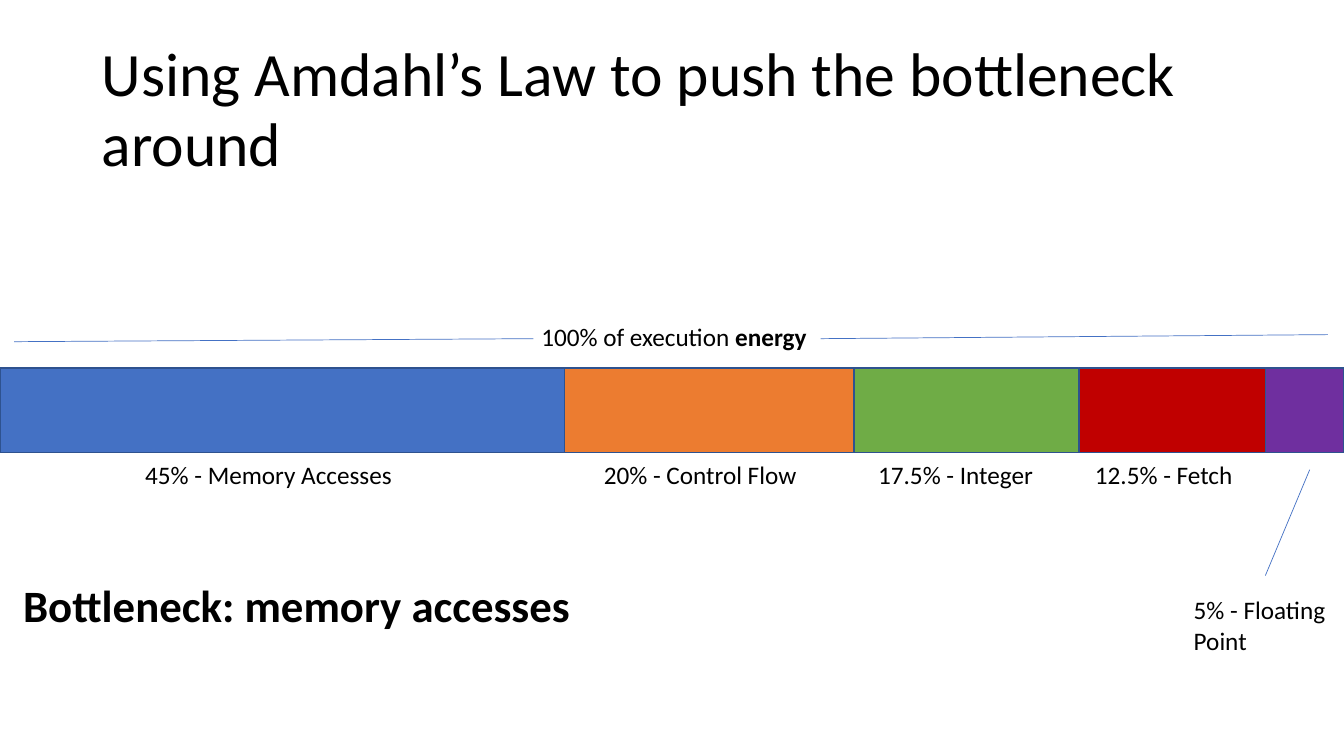
import itertools

import pptx
import pptx.dml.color
import pptx.enum.shapes
import pptx.oxml
import pptx.oxml.ns
import pptx.util

COLUMNS, ROWS = 13.33, 7.5
BAR_TOP, BAR_HEIGHT = 3.65, 0.84
LABEL_TOP = 4.55

# width, fill, label, label left, label top, label width
SEGMENTS = [
    (5.6, "4471C4", ["45% - Memory Accesses"], 1.43, LABEL_TOP, 2.48),
    (2.87, "EC7C30", ["20% - Control Flow"], 5.98, LABEL_TOP, 1.94),
    (2.23, "6FAC46", ["17.5% - Integer"], 8.7, LABEL_TOP, 1.57),
    (1.85, "C00000", ["12.5% - Fetch"], 10.85, LABEL_TOP, 1.39),
    (0.78, "6F2F9F", ["5% - Floating", "Point"], 11.83, 5.89, 1.34),
]


def colour(code):
    return pptx.dml.color.RGBColor.from_string(code)


def assign(target, values):
    for name, value in values.items():
        setattr(target, name, value)


class EnergySlide:
    """Draws on one slide, on a grid of one-inch columns and rows."""

    font = "Calibri"
    ink = "000000"
    outline = "2E528F"
    rule = "4471C4"

    def __init__(self, deck):
        assign(deck, {"slide_width": self.grid(COLUMNS), "slide_height": self.grid(ROWS)})
        self.page = deck.slides.add_slide(deck.slide_layouts[6])

    def grid(self, cells):
        return pptx.util.Inches(cells)

    def text(self, place, paras, size=18, bold=False, inset=(0.01, 0.01), leading=None):
        """Write paras; each is a string or a list of (words, bold) spans."""
        box = self.page.shapes.add_textbox(*map(self.grid, place))
        left, top = map(self.grid, inset)
        assign(box.text_frame, {"word_wrap": False, "margin_left": left, "margin_top": top,
                                "margin_right": 0, "margin_bottom": 0})
        for index, spans in enumerate(paras):
            para = box.text_frame.paragraphs[0] if index == 0 else box.text_frame.add_paragraph()
            assign(para, {"space_before": pptx.util.Pt(0 if index else 1),
                          "line_spacing": leading and pptx.util.Pt(leading)})
            for words, heavy in [(spans, bold)] if isinstance(spans, str) else spans:
                span = para.add_run()
                span.text = words
                assign(span.font, {"name": self.font, "size": pptx.util.Pt(size), "bold": heavy})
                span.font.color.rgb = colour(self.ink)

    def segment(self, place, fill):
        kind = pptx.enum.shapes.MSO_SHAPE.RECTANGLE
        bar = self.page.shapes.add_shape(kind, *map(self.grid, place))
        bar.shadow.inherit = False
        bar.fill.solid()
        bar.fill.fore_color.rgb = colour(fill)
        bar.line.color.rgb = colour(self.outline)
        bar.line.width = pptx.util.Pt(1)

    def line(self, *ends):
        kind = pptx.enum.shapes.MSO_CONNECTOR.STRAIGHT
        link = self.page.shapes.add_connector(kind, *map(self.grid, ends))
        link.line.color.rgb = colour(self.rule)
        link.line.width = pptx.util.Pt(0.5)
        properties = link._element.spPr
        properties.append(pptx.oxml.parse_xml(
            f"<a:effectLst {pptx.oxml.ns.nsdecls('a')}/>"))


def main():
    deck = pptx.Presentation()
    slide = EnergySlide(deck)
    slide.text((0.2, 0.27, 12.55, 1.52),
               ["Using Amdahl’s Law to push the bottleneck", "around"],
               size=44, inset=(0.81, 0.11), leading=50.1)

    lefts = itertools.accumulate((segment[0] for segment in SEGMENTS), initial=0)
    for left, (width, fill, label, label_left, label_top, label_width) in zip(lefts, SEGMENTS):
        slide.segment((left, BAR_TOP, width, BAR_HEIGHT), fill)
        slide.text((label_left, label_top, label_width, 0.33 * len(label)), label)

    slide.text((5.36, 3.18, 2.67, 0.33), [[("100% of execution ", False), ("energy", True)]])
    slide.line(0.14, 3.39, 5.29, 3.36)
    slide.line(8.14, 3.36, 13.17, 3.32)
    slide.line(12.99, 4.66, 12.55, 5.71)
    slide.text((0.22, 5.72, 5.47, 0.56), ["Bottleneck: memory accesses"], size=32, bold=True)
    deck.save("out.pptx")


if __name__ == "__main__":
    main()
